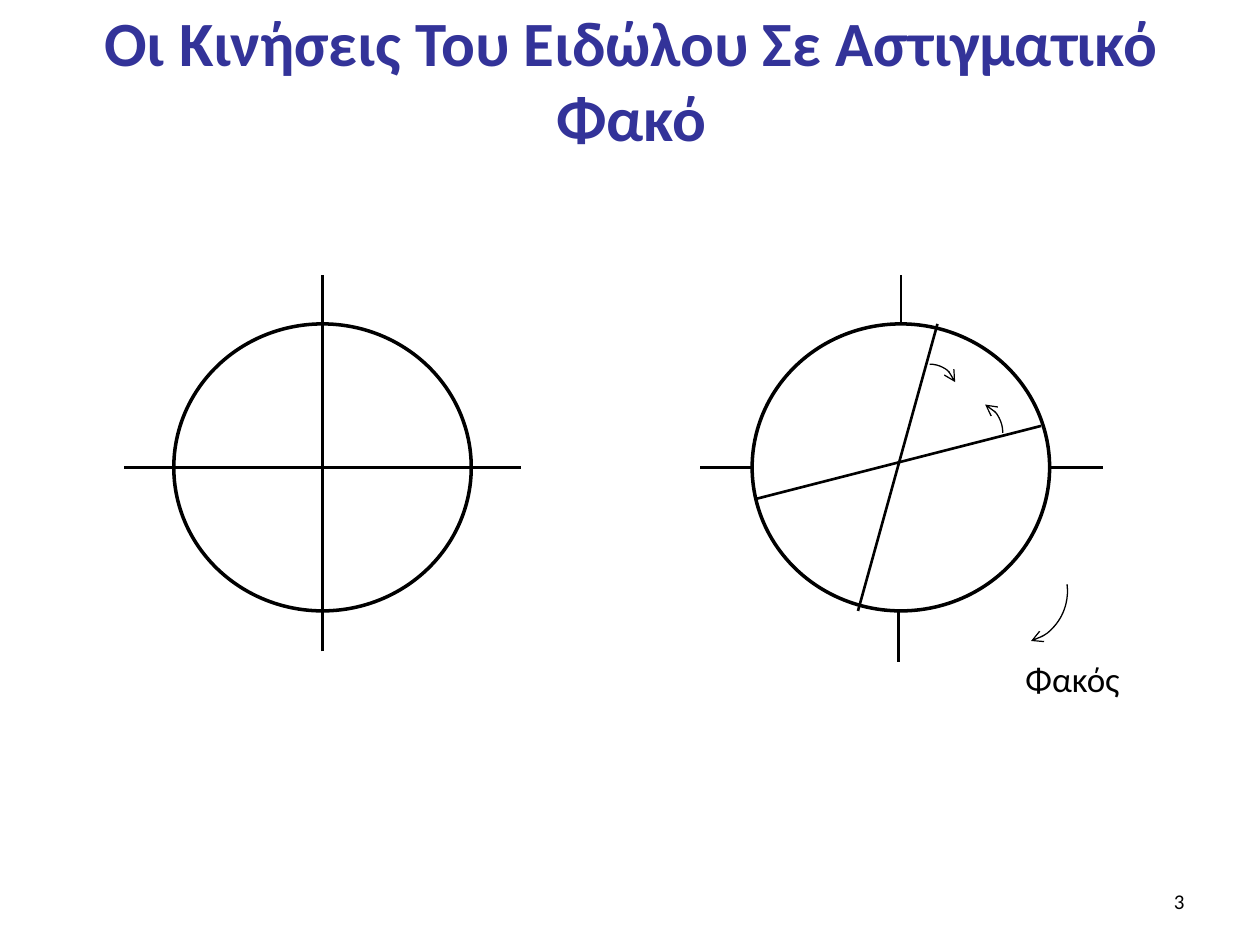
from lxml import etree
from pptx import Presentation
from pptx.dml.color import RGBColor
from pptx.enum.shapes import MSO_CONNECTOR, MSO_SHAPE
from pptx.enum.text import MSO_ANCHOR, PP_ALIGN
from pptx.oxml.ns import qn
from pptx.util import Pt

STRAIGHT = MSO_CONNECTOR.STRAIGHT
ELLIPSE, ARC = MSO_SHAPE.OVAL, MSO_SHAPE.ARC
TOP, MIDDLE = MSO_ANCHOR.TOP, MSO_ANCHOR.MIDDLE
LEFT, CENTER, RIGHT = PP_ALIGN.LEFT, PP_ALIGN.CENTER, PP_ALIGN.RIGHT
BLACK = RGBColor(0x00, 0x00, 0x00)
TITLE_BLUE = RGBColor(0x33, 0x33, 0x99)

deck = Presentation()
deck.slide_width, deck.slide_height = Pt(720), Pt(540)
page = deck.slides.add_slide(deck.slide_layouts[6])


def add_text(text, bounds, size, color, align, anchor, bold=False):
    box = page.shapes.add_textbox(*map(Pt, bounds))
    frame = box.text_frame
    frame.word_wrap = True
    frame.vertical_anchor = anchor
    para = frame.paragraphs[0]
    para.text = text
    para.alignment = align
    para.font.name = "Calibri"
    para.font.size = Pt(size)
    para.font.bold = bold
    para.font.color.rgb = color


def add_outline(kind, bounds, weight):
    """Add an unfilled preset shape with a black line."""
    shape = page.shapes.add_shape(kind, *map(Pt, bounds))
    shape.shadow.inherit = False
    shape.fill.background()
    shape.line.color.rgb = BLACK
    shape.line.width = Pt(weight)
    return shape


add_text("Οι Κινήσεις Του Ειδώλου Σε Αστιγματικό Φακό",
         (36.7, 9.4, 648, 71.3), 36, TITLE_BLUE, CENTER, MIDDLE, bold=True)

# Two lens outlines of the same size, side by side
RADIUS_X, RADIUS_Y = 85, 82
CENTER_Y = 267.1
LEFT_X, RIGHT_X = 184.3, 514.8
lens_top, lens_bottom = CENTER_Y - RADIUS_Y, CENTER_Y + RADIUS_Y
lens_left, lens_right = RIGHT_X - RADIUS_X, RIGHT_X + RADIUS_X
for center_x in (LEFT_X, RIGHT_X):
    add_outline(ELLIPSE, (center_x - RADIUS_X, lens_top, 2 * RADIUS_X, 2 * RADIUS_Y), 2)

lines = [
    # Full cross through the left lens
    (LEFT_X, 372.2, LEFT_X, 157),
    (LEFT_X + 113.4, CENTER_Y, LEFT_X - 113.4, CENTER_Y),
    # Cross outside the right lens
    (RIGHT_X, lens_top, RIGHT_X, 157),
    (RIGHT_X - 1.2, 378, RIGHT_X - 1.2, lens_bottom),
    (lens_left, CENTER_Y, 400.3, CENTER_Y),
    (630, CENTER_Y, lens_right, CENTER_Y),
    # Turned cross seen through the right lens
    (490.3, lens_bottom, 535.7, lens_top),
    (432, 285.1, 594.9, 243.4),
]
for ends in lines:
    line = page.shapes.add_connector(STRAIGHT, *map(Pt, ends))
    line.line.color.rgb = BLACK
    line.line.width = Pt(1.5)
    etree.SubElement(line._element.spPr, qn("a:effectLst"))

# Turning arrows: bounds, start and end angle in degrees, rotation, arrow end
turns = [
    ((516.2, 208.1, 30.2, 28.1), 270, 345.4, 0, "a:tailEnd"),
    ((539.3, 229.7, 33.8, 35.3), 292.8, 0, 0, "a:headEnd"),
    ((555.1, 312.5, 56.9, 52.6), 245.8, 334.95, 103.5, "a:tailEnd"),
]
for bounds, start, end, rotation, arrow_end in turns:
    arc = add_outline(ARC, bounds, 0.75)
    arc.rotation = rotation
    # Arc angles are 60000ths of a degree; adjustments are scaled by 100000
    arc.adjustments[0], arc.adjustments[1] = start * 0.6, end * 0.6
    etree.SubElement(arc.line._get_or_add_ln(), qn(arrow_end), type="arrow")

add_text("Φακός", (578.9, 372.2, 75.6, 31.7), 20, BLACK, LEFT, TOP)
add_text("3", (516.2, 500.4, 167.8, 28.8), 12, BLACK, RIGHT, MIDDLE)

deck.save("out.pptx")
